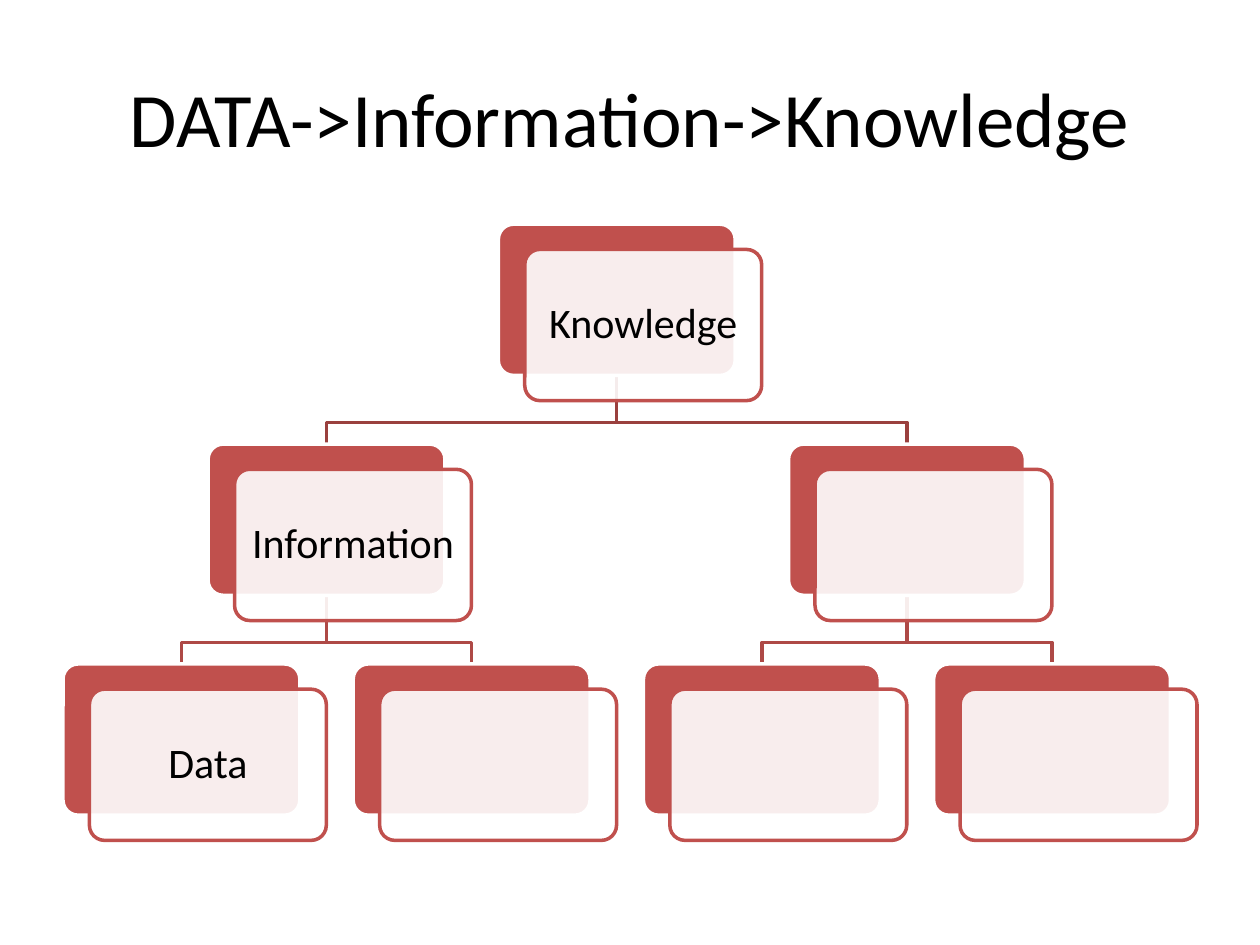
from lxml import etree
from pptx import Presentation
from pptx import util as u
from pptx.dml.color import RGBColor
from pptx.enum import shapes, text
from pptx.oxml.ns import qn

RED, WHITE, BLACK = "C0504D", "FFFFFF", "000000"
CARD_W, CARD_H = 1.88, 1.2
LEFT, TOP = 0.5, 1.78
COLUMN_STEP, ROW_STEP = 6.91 / 3, 3.49 / 2
FRONT_DX, FRONT_DY = 0.21, 0.2
BEND_GAP = 0.17  # from the bend of a branch down to the child card

# name: (column, row, label, parent); a parent stands midway between its children
NODES = {
    "knowledge": (1.5, 0, "Knowledge", None),
    "information": (0.5, 1, "Information", "knowledge"),
    "data": (0, 2, "Data", "information"),
    "left leaf": (1, 2, "", "information"),
    "right branch": (2.5, 1, "", "knowledge"),
    "middle leaf": (2, 2, "", "right branch"),
    "right leaf": (3, 2, "", "right branch"),
}
BRANCH_COLORS = {1: "9A403E", 2: "AE4946"}


def rgb(value):
    return RGBColor.from_string(value)


def write(tf, content, size=24, font="Calibri", color=BLACK, spacing=None):
    p = tf.paragraphs[0]
    p.alignment = text.PP_ALIGN.CENTER
    p.line_spacing = spacing
    r = p.add_run()
    r.text = content
    r.font.size = u.Pt(size)
    r.font.name = font
    r.font.color.rgb = rgb(color)


def card_position(name):
    column, row = NODES[name][:2]
    return LEFT + column * COLUMN_STEP, TOP + row * ROW_STEP


class TreeSlide:
    """Holds the current slide and the line style of its elements."""

    def __init__(self, s, line_width=2):
        self.s = s
        self.line_width = u.Pt(line_width)

    def outline(self, sp, color):
        sp.shadow.inherit = False
        sp.line.color.rgb = rgb(color)
        sp.line.width = self.line_width

    def label(self, content, x, y, w, h, inset=0.1, **style):
        sp = self.s.shapes.add_textbox(*map(u.Inches, (x, y, w, h)))
        tf = sp.text_frame
        tf.word_wrap = True
        tf.vertical_anchor = text.MSO_ANCHOR.MIDDLE
        tf.margin_left = tf.margin_right = u.Inches(inset)
        tf.margin_top = tf.margin_bottom = u.Inches(inset)
        write(tf, content, **style)

    def panel(self, x, y, fill, line, opacity=100):
        sp = self.s.shapes.add_shape(
            shapes.MSO_SHAPE.ROUNDED_RECTANGLE,
            *map(u.Inches, (x, y, CARD_W, CARD_H)))
        sp.adjustments[0] = 0.1
        sp.fill.solid()
        sp.fill.fore_color.rgb = rgb(fill)
        self.outline(sp, line)
        if opacity < 100:
            color = sp.fill._xPr.find(qn("a:solidFill"))[0]
            etree.SubElement(color, qn("a:alpha"), val=str(opacity * 1000))

    def card(self, name):
        x, y = card_position(name)
        self.panel(x, y, RED, WHITE)
        x, y = x + FRONT_DX, y + FRONT_DY
        self.panel(x, y, WHITE, RED, opacity=90)
        content = NODES[name][2]
        if content:
            self.label(content, x, y, CARD_W, CARD_H, spacing=0.9)

    def branch(self, parent, child):
        """Draw the elbow line from the parent card to the child card."""
        (px, py), (cx, cy) = card_position(parent), card_position(child)
        start, end = px + CARD_W / 2, cx + CARD_W / 2
        bend = cy - BEND_GAP
        points = [(start, py + CARD_H), (start, bend), (end, bend), (end, cy)]
        first, *rest = [(u.Inches(x), u.Inches(y)) for x, y in points]
        builder = self.s.shapes.build_freeform(*first)
        builder.add_line_segments(rest, close=False)
        sp = builder.convert_to_shape()
        sp.fill.background()
        self.outline(sp, BRANCH_COLORS[NODES[child][1]])


def main():
    prs = Presentation()
    prs.slide_width, prs.slide_height = u.Inches(10), u.Inches(7.5)
    tree = TreeSlide(prs.slides.add_slide(prs.slide_layouts[6]))
    tree.label("DATA->Information->Knowledge", 0.5, 0.3, 9, 1.25, size=44)
    for name, (_, _, _, parent) in reversed(NODES.items()):
        if parent:
            tree.branch(parent, name)
    for name in NODES:
        tree.card(name)
    prs.save("out.pptx")


if __name__ == "__main__":
    main()
